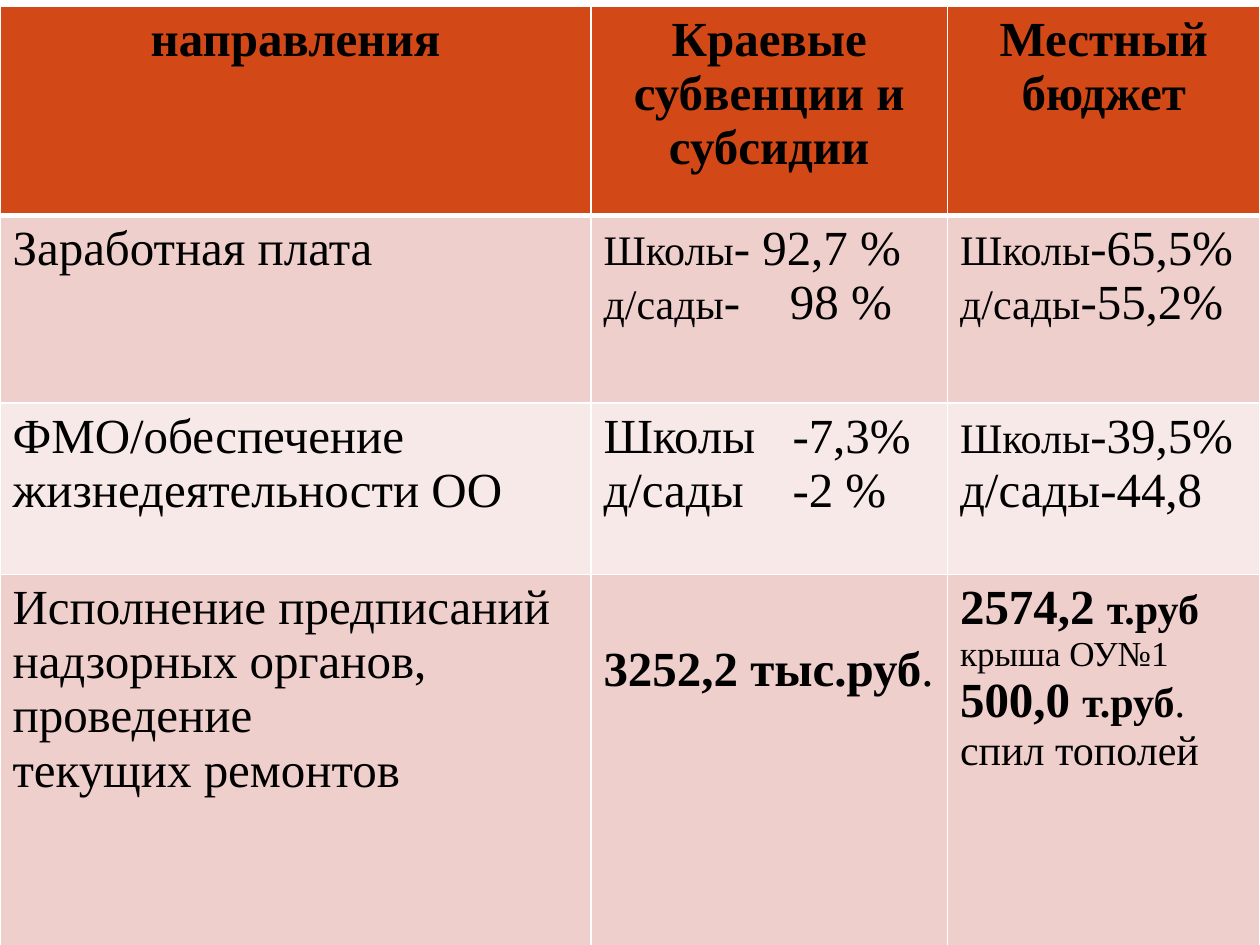
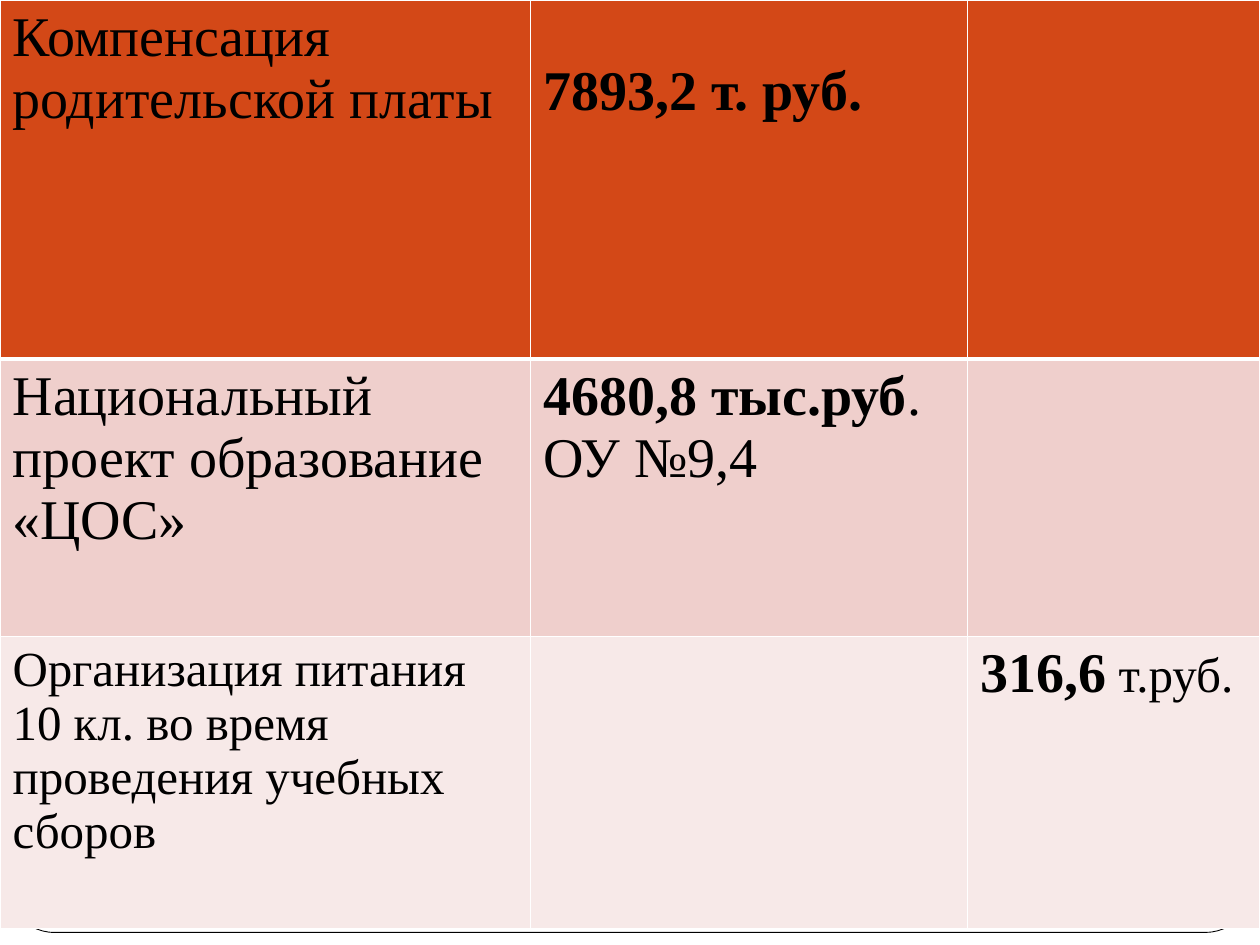
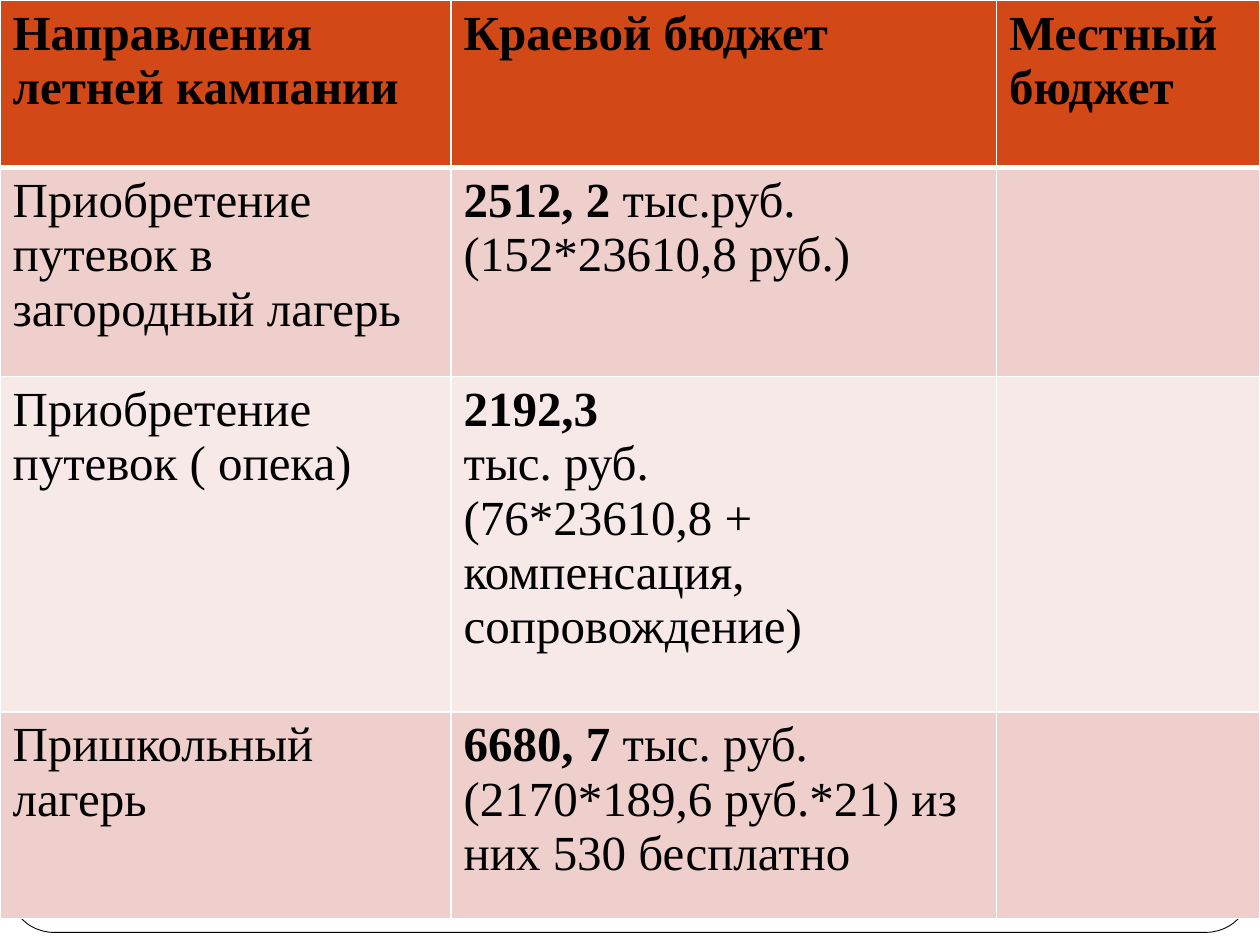
import pptx
import pptx.dml.color
import pptx.enum.shapes
import pptx.enum.text
import pptx.oxml
import pptx.oxml.ns
import pptx.util
from pptx.util import Inches

FONT = "Times New Roman"
BLACK, WHITE = "000000", "FFFFFF"
HEADER_FILL = "D34817"
BAND_FILLS = ("EFCFCC", "F7E9E8")
SMALL, NORMAL, LARGE = 24, 28, 32
LINE_HEIGHT = 1.107
CELL_MARGIN = 0.05


def color(value):
    return pptx.dml.color.RGBColor.from_string(value)


def span(text, size=NORMAL, bold=False):
    return text, size, bold


def large(text, bold=False):
    return span(text, LARGE, bold)


def bold(text):
    return span(text, bold=True)


def add_text(cell, paragraphs, centered=False, lines_above=0, tab=None):
    """Each paragraph is a list of spans; lines_above is a gap in points of text size."""
    cell.margin_top = Inches(round(CELL_MARGIN + lines_above * LINE_HEIGHT / 72, 2))
    frame = cell.text_frame
    for index, spans in enumerate(paragraphs):
        para = frame.add_paragraph() if index else frame.paragraphs[0]
        if centered:
            para.alignment = pptx.enum.text.PP_ALIGN.CENTER
        if tab:
            set_tab(para, tab)
        for text, size, is_bold in spans:
            run = para.add_run()
            run.text = text
            run.font.name = FONT
            run.font.size = pptx.util.Pt(size)
            run.font.bold = is_bold
            run.font.color.rgb = color(BLACK)


def set_tab(para, position):
    para._p.get_or_add_pPr().append(pptx.oxml.parse_xml(
        f'<a:tabLst {pptx.oxml.ns.nsdecls("a")}>'
        f'<a:tab pos="{Inches(position)}" algn="l"/></a:tabLst>'))


def set_borders(cell, top=1, bottom=1):
    properties = cell._tc.get_or_add_tcPr()
    for side, width in (("L", 1), ("R", 1), ("T", top), ("B", bottom)):
        properties.append(pptx.oxml.parse_xml(
            f'<a:ln{side} {pptx.oxml.ns.nsdecls("a")} w="{pptx.util.Pt(width)}">'
            f'<a:solidFill><a:srgbClr val="{WHITE}"/></a:solidFill></a:ln{side}>'))


def add_frame(page):
    """Rounded outline shared by all slides."""
    box = page.shapes.add_shape(
        pptx.enum.shapes.MSO_SHAPE.ROUNDED_RECTANGLE,
        Inches(0.07), Inches(0.08), Inches(9.86), Inches(7.32))
    box.adjustments[0] = 0.049
    box.shadow.inherit = False
    box.fill.solid()
    box.fill.fore_color.rgb = color(WHITE)
    box.line.color.rgb = color(BLACK)
    box.line.width = pptx.util.Pt(0.5)


def add_budget_table(page, top, widths, heights, rows):
    """A cell is None, a list of paragraphs, or (paragraphs, text format)."""
    table = page.shapes.add_table(
        len(heights), len(widths), 0, Inches(top),
        Inches(sum(widths)), Inches(sum(heights))).table
    for column, width in zip(table.columns, widths):
        column.width = Inches(width)
    for number, (height, contents) in enumerate(zip(heights, rows)):
        table.rows[number].height = Inches(height)
        for cell, content in zip(table.rows[number].cells, contents):
            set_borders(cell, top=3 if number == 1 else 1,
                        bottom=3 if number == 0 else 1)
            cell.fill.solid()
            cell.fill.fore_color.rgb = color(
                BAND_FILLS[(number - 1) % 2] if number else HEADER_FILL)
            if isinstance(content, tuple):
                add_text(cell, content[0], **content[1])
            elif content:
                add_text(cell, content)


def add_page(deck, **table):
    page = deck.slides.add_slide(deck.slide_layouts[6])
    add_frame(page)
    add_budget_table(page, **table)


def add_directions_page(deck):
    def heading(text):
        return [[bold(text)]], {"centered": True}

    def share(place, value):
        return [span(place, SMALL), span(value)]

    add_page(
        deck, top=0.05, widths=[4.69, 2.83, 2.48], heights=[1.66, 1.49, 1.36, 3.4],
        rows=[
            [heading("направления"),
             heading("Краевые субвенции и субсидии"),
             heading("Местный бюджет")],
            [[[span("Заработная плата")]],
             ([share("Школы", "- 92,7 %"), share("д/сады", "-\t98 %")], {"tab": 1.48}),
             [share("Школы", "-65,5%"), share("д/сады", "-55,2%")]],
            [[[span("ФМО/обеспечение жизнедеятельности ОО")]],
             ([[span("Школы\t-7,3%")], [span("д/сады\t-2 %")]], {"tab": 1.5}),
             [share("Школы", "-39,5%"), [span("д/сады-44,8")]]],
            [[[span("Исполнение предписаний надзорных органов, проведение")],
              [span("текущих ремонтов")]],
             ([[bold("3252,2 тыс.руб"), span(".")]], {"lines_above": LARGE}),
             [[bold("2574,2 "), span("т.руб", SMALL, True), bold(" "),
               span("крыша ОУ№1", 20)],
              [bold("500,0 "), span("т.руb".replace("b", "б"), SMALL, True), span(".", SMALL)],
              [span("спил тополей", SMALL)]]],
        ])


def add_projects_page(deck):
    add_page(
        deck, top=0, widths=[4.21, 3.47, 2.32], heights=[2.85, 2.2, 2.32],
        rows=[
            [[[large("Компенсация родительской платы")]],
             ([[large("7893,2 т. руб.", True)]], {"lines_above": NORMAL}),
             None],
            [[[large("Национальный проект образование «ЦОС»")]],
             [[large("4680,8 тыс.руб", True), large(".")], [large("ОУ №9,4")]],
             None],
            [[[span("Организация питания 10 кл. во время проведения учебных сборов")]],
             None,
             [[large("316,6", True), span(" т.руб.")]]],
        ])


def add_summer_page(deck):
    add_page(
        deck, top=0, widths=[3.58, 4.33, 2.09], heights=[1.33, 1.66, 2.66, 1.64],
        rows=[
            [[[bold("Направления летней кампании")]],
             [[bold("Краевой бюджет")]],
             [[bold("Местный бюджет")]]],
            [[[span("Приобретение путевок в загородный лагерь")]],
             [[bold("2512, 2 "), span("тыс.руб.")], [span("(152*23610,8 руб.)")]],
             None],
            [[[span("Приобретение путевок ( опека)")]],
             [[bold("2192,3")], [span("тыс. руб.")], [span("(76*23610,8 +")],
              [span("компенсация, сопровождение)")]],
             None],
            [[[span("Пришкольный лагерь")]],
             [[bold("6680, 7 "), span("тыс. руб.")],
              [span("(2170*189,6 руб.*21) из них 530 бесплатно")]],
             None],
        ])


def main():
    deck = pptx.Presentation()
    deck.slide_width, deck.slide_height = Inches(10), Inches(7.5)
    add_directions_page(deck)
    add_projects_page(deck)
    add_summer_page(deck)
    deck.save("out.pptx")


if __name__ == "__main__":
    main()
